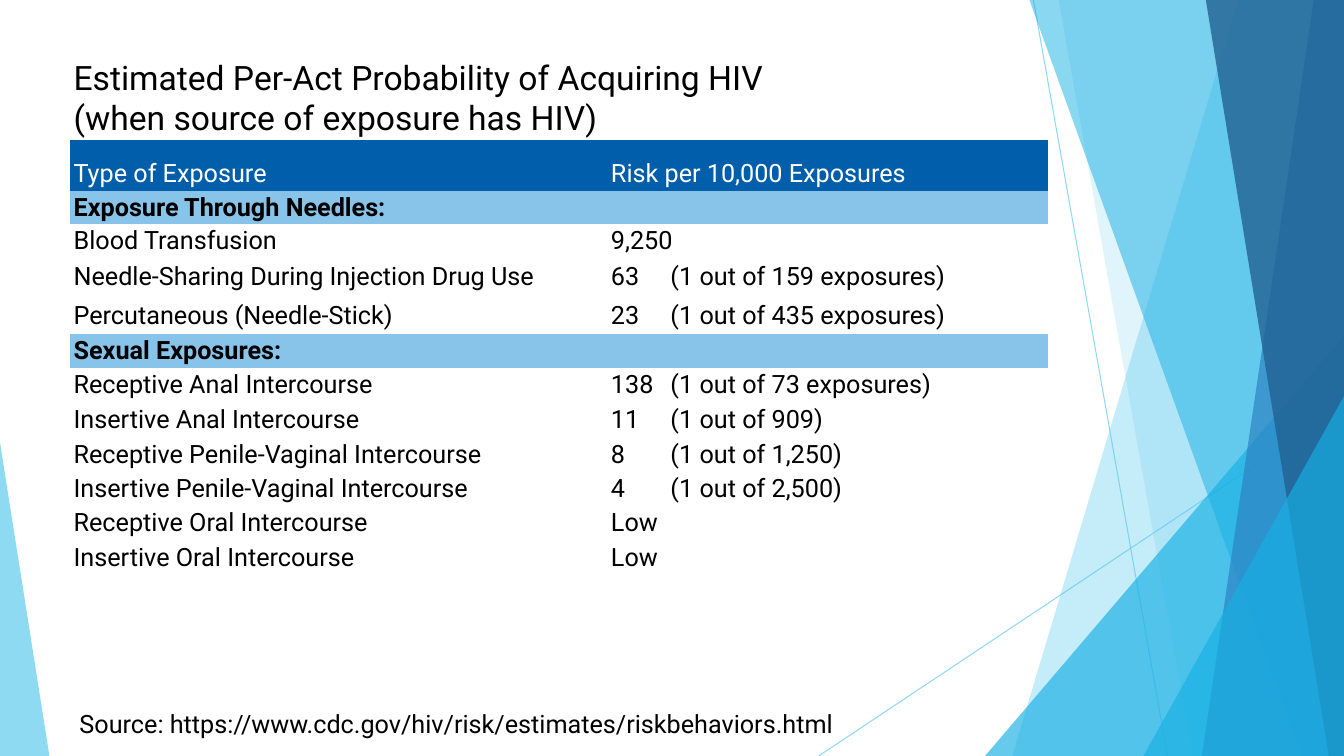
from pptx import Presentation
from pptx.dml.color import RGBColor
from pptx.enum.shapes import MSO_CONNECTOR, MSO_SHAPE
from pptx.enum.text import MSO_ANCHOR
from pptx.oxml.ns import qn
from pptx.util import Inches, Pt
from lxml.etree import SubElement

WIDTH, HEIGHT = 13.33, 7.5
NO_GRID_STYLE = "{2D5ABB26-0587-4C30-8999-92F81FD0307C}"
SKY, CYAN, BLUE, NAVY = "5FCBEF", "17B0E4", "2E83C3", "226292"
HEADER, SECTION = "005EAA", "88C3EA"

TITLE = "Estimated Per-Act Probability of Acquiring HIV\n(when source of exposure has HIV)"
SOURCE = "Source: https://www.cdc.gov/hiv/risk/estimates/riskbehaviors.html"
# Row height, then the texts; a single text spans both columns.
ROWS = [
    (0.65, TITLE),
    (0.5, "Type of Exposure", "Risk per 10,000 Exposures"),
    (0.3, "Exposure Through Needles:"),
    (0.35, "Blood Transfusion", "9,250"),
    (0.39, "Needle-Sharing During Injection Drug Use", "63\t(1 out of 159 exposures)"),
    (0.35, "Percutaneous (Needle-Stick)", "23\t(1 out of 435 exposures)"),
    (0.3, "Sexual Exposures:"),
    (0.35, "Receptive Anal Intercourse", "138\t(1 out of 73 exposures)"),
    (0.35, "Insertive Anal Intercourse", "11\t(1 out of 909)"),
    (0.34, "Receptive Penile-Vaginal Intercourse", "8\t(1 out of 1,250)"),
    (0.33, "Insertive Penile-Vaginal Intercourse", "4\t(1 out of 2,500)"),
    (0.35, "Receptive Oral Intercourse", "Low"),
    (0.35, "Insertive Oral Intercourse", "Low"),
]


def rgb(value):
    return RGBColor.from_string(value)


class SlideBuilder:
    font = "Roboto"

    def __init__(self, slide):
        self.shapes = slide.shapes

    def set_alpha(self, fill, percent):
        color = fill._xPr.find(qn("a:solidFill"))[0]
        SubElement(color, qn("a:alpha"), val=str(percent * 1000))

    def paint(self, shape, color, alpha):
        shape.shadow.inherit = False
        shape.fill.solid()
        shape.fill.fore_color.rgb = rgb(color)
        self.set_alpha(shape.fill, alpha)
        shape.line.fill.background()

    def line(self, x1, y1, x2, y2):
        connector = self.shapes.add_connector(
            MSO_CONNECTOR.STRAIGHT, Inches(x1), Inches(y1), Inches(x2), Inches(y2))
        connector.line.width = Pt(0.75)
        connector.line.color.rgb = rgb(SKY)
        self.set_alpha(connector.line.fill, 70)
        SubElement(connector._element.spPr, qn("a:effectLst"))

    def facet(self, top_x, bottom_x, color, alpha):
        """Fill the area between a slanted edge and the slide's right side."""
        builder = self.shapes.build_freeform(Inches(top_x), 0)
        corners = [(WIDTH, 0), (WIDTH, HEIGHT), (bottom_x, HEIGHT)]
        builder.add_line_segments([(Inches(x), Inches(y)) for x, y in corners])
        self.paint(builder.convert_to_shape(), color, alpha)

    def triangle(self, left, top, width, apex, color, alpha):
        """Stand a triangle on the slide's bottom edge; apex is 0 left, 1 right."""
        shape = self.shapes.add_shape(
            MSO_SHAPE.ISOSCELES_TRIANGLE, Inches(left), Inches(top),
            Inches(width), Inches(HEIGHT - top))
        shape.adjustments[0] = apex
        self.paint(shape, color, alpha)

    def set_text(self, text_frame, text, size=18, color="000000", bold=False):
        text_frame.text = text
        for paragraph in text_frame.paragraphs:
            for run in paragraph.runs:
                run.font.name = self.font
                run.font.size = Pt(size)
                run.font.bold = bold
                run.font.color.rgb = rgb(color)

    def text(self, left, top, width, height, text):
        text_frame = self.shapes.add_textbox(
            Inches(left), Inches(top), Inches(width), Inches(height)).text_frame
        text_frame.word_wrap = True
        self.set_text(text_frame, text)

    def cell(self, cell, text, fill=None, anchor=MSO_ANCHOR.TOP, **style):
        cell.margin_left = cell.margin_right = Inches(0.04)
        cell.margin_top = cell.margin_bottom = Inches(0.02)
        cell.vertical_anchor = anchor
        if fill:
            cell.fill.solid()
            cell.fill.fore_color.rgb = rgb(fill)
        else:
            cell.fill.background()
        self.set_text(cell.text_frame, text, **style)
        if "\t" in text:
            properties = cell.text_frame.paragraphs[0]._p.get_or_add_pPr()
            tabs = SubElement(properties, qn("a:tabLst"))
            SubElement(tabs, qn("a:tab"), pos=str(Inches(0.59)), algn="l")

    def risk_table(self, left, top, column_widths, rows):
        height = sum(row[0] for row in rows)
        table = self.shapes.add_table(
            len(rows), len(column_widths), Inches(left), Inches(top),
            Inches(sum(column_widths)), Inches(height)).table
        table.first_row = table.horz_banding = False
        table._tbl.tblPr.find(qn("a:tableStyleId")).text = NO_GRID_STYLE
        for column, width in zip(table.columns, column_widths):
            column.width = Inches(width)
        for index, (row_height, *texts) in enumerate(rows):
            table.rows[index].height = Inches(row_height)
            if index == 0:
                style = dict(size=24, anchor=MSO_ANCHOR.MIDDLE)
            elif index == 1:
                style = dict(fill=HEADER, color="FFFFFF", anchor=MSO_ANCHOR.BOTTOM)
            elif len(texts) == 1:
                style = dict(fill=SECTION, bold=True)
            else:
                style = {}
            if len(texts) == 1:
                table.cell(index, 0).merge(table.cell(index, 1))
                texts.append("")
            for column, text in enumerate(texts):
                self.cell(table.cell(index, column), text, **style)


def main():
    presentation = Presentation()
    presentation.slide_width = Inches(WIDTH)
    presentation.slide_height = Inches(HEIGHT)
    builder = SlideBuilder(presentation.slides.add_slide(presentation.slide_layouts[6]))

    builder.line(10.25, 0, 11.58, HEIGHT)
    builder.line(WIDTH, 4.03, 8.12, HEIGHT)
    builder.facet(12.28, 10.04, SKY, 36)
    builder.facet(10.5, 11.83, SKY, 20)
    builder.triangle(9.77, 3.33, 3.56, 1, CYAN, 66)
    builder.facet(10.21, 12.91, CYAN, 50)
    builder.facet(13.03, 11.92, BLUE, 70)
    builder.facet(11.96, 13.18, NAVY, 80)
    builder.triangle(11.34, 3.93, 1.99, 1, CYAN, 66)
    builder.triangle(0, 4.39, 0.49, 0, SKY, 70)

    builder.risk_table(0.69, 0.57, (5.33, 4.37), ROWS)
    builder.text(0.69, 6.98, 9.04, 0.4, SOURCE)
    presentation.save("out.pptx")


if __name__ == "__main__":
    main()
